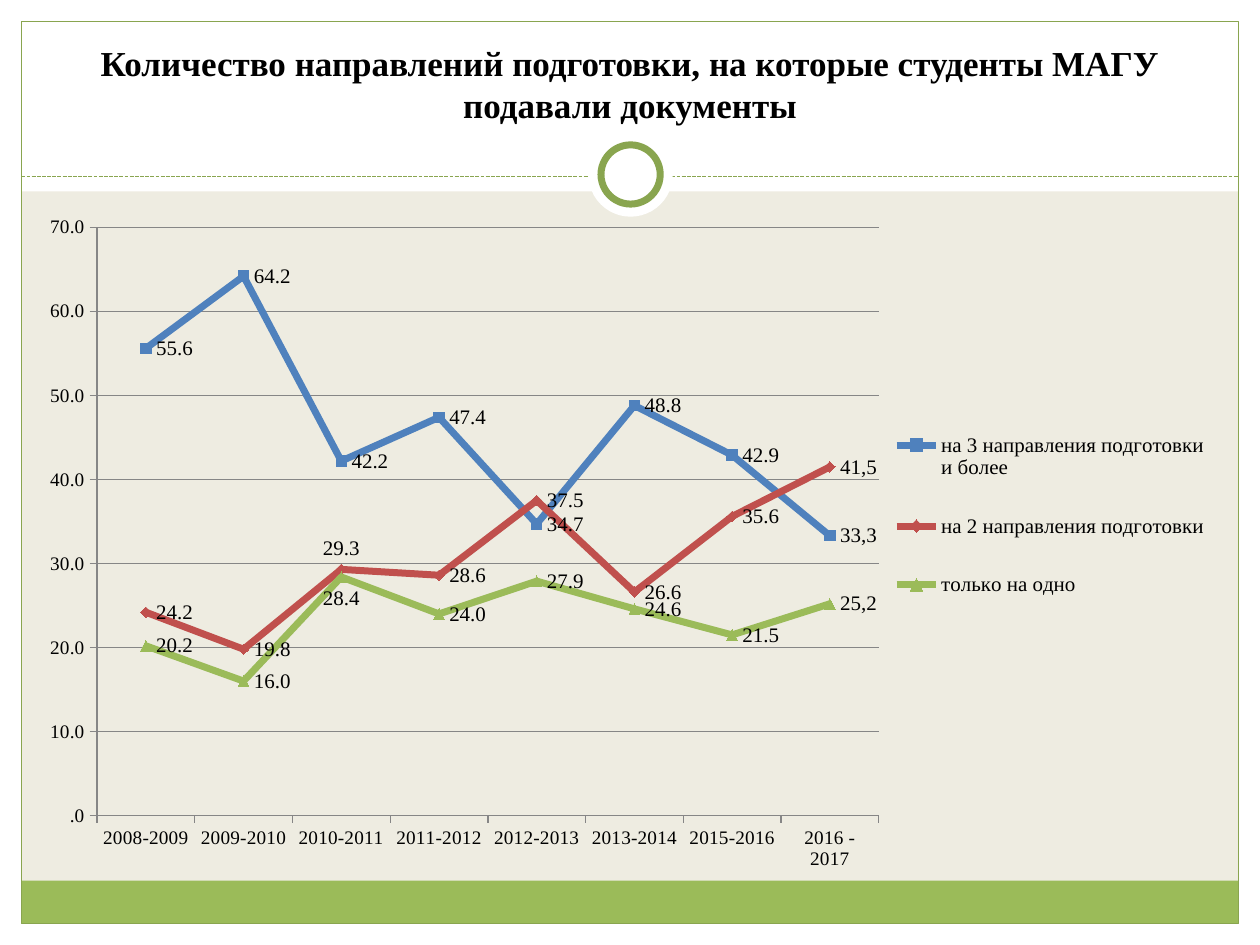
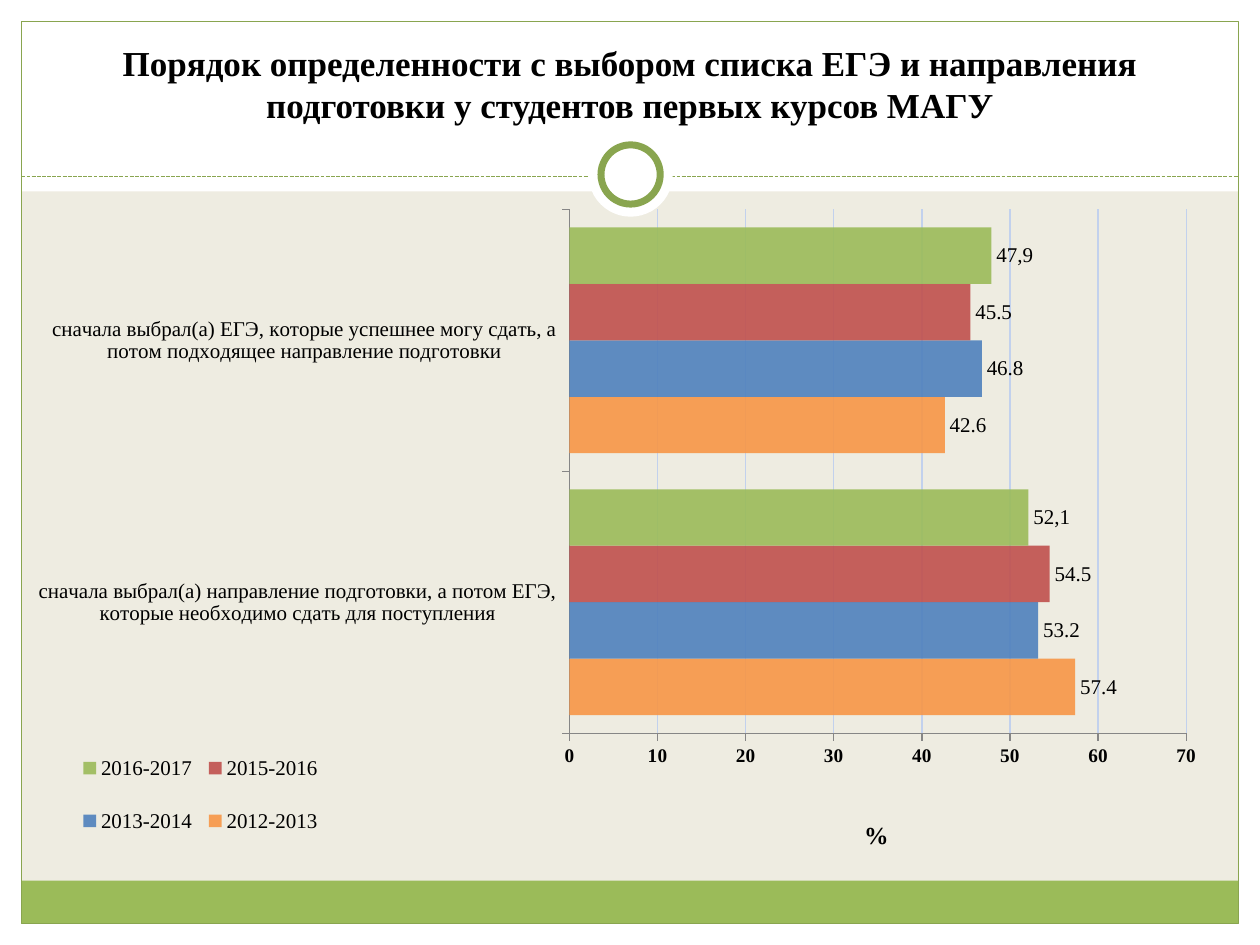
from typing import NamedTuple

from lxml import etree
from pptx import Presentation
from pptx.chart.data import CategoryChartData
from pptx.dml.color import RGBColor
from pptx.enum.chart import XL_CHART_TYPE, XL_LABEL_POSITION, XL_LEGEND_POSITION, XL_MARKER_STYLE, XL_TICK_MARK
from pptx.enum.dml import MSO_LINE
from pptx.enum.shapes import MSO_CONNECTOR, MSO_SHAPE
from pptx.enum.text import MSO_ANCHOR, PP_ALIGN
from pptx.oxml.ns import qn
from pptx.util import Inches, Pt

LINE_CHART = XL_CHART_TYPE.LINE_MARKERS
BAR_CHART = XL_CHART_TYPE.BAR_CLUSTERED
ABOVE = XL_LABEL_POSITION.ABOVE
BELOW = XL_LABEL_POSITION.BELOW
RIGHT = XL_LABEL_POSITION.RIGHT
OUTSIDE_END = XL_LABEL_POSITION.OUTSIDE_END
LEGEND_RIGHT = XL_LEGEND_POSITION.RIGHT
SQUARE = XL_MARKER_STYLE.SQUARE
DIAMOND = XL_MARKER_STYLE.DIAMOND
TRIANGLE = XL_MARKER_STYLE.TRIANGLE
TICK_OUTSIDE = XL_TICK_MARK.OUTSIDE
TICK_NONE = XL_TICK_MARK.NONE
DASH = MSO_LINE.SQUARE_DOT
STRAIGHT = MSO_CONNECTOR.STRAIGHT
RECTANGLE = MSO_SHAPE.RECTANGLE
OVAL = MSO_SHAPE.OVAL
BOTTOM = MSO_ANCHOR.BOTTOM
CENTER = PP_ALIGN.CENTER

FONT = "Times New Roman"
BLACK = RGBColor(0x00, 0x00, 0x00)
WHITE = RGBColor(0xFF, 0xFF, 0xFF)
BEIGE = RGBColor(0xEE, 0xEC, 0xE1)
GREEN = RGBColor(0x9B, 0xBB, 0x59)
DARK_GREEN = RGBColor(0x89, 0xA5, 0x4F)
BLUE = RGBColor(0x4F, 0x81, 0xBD)
RED = RGBColor(0xC0, 0x50, 0x4D)
ORANGE = RGBColor(0xF7, 0x96, 0x46)
AXIS_GRAY = RGBColor(0x86, 0x86, 0x86)
PALE_BLUE = RGBColor(0xC2, 0xD1, 0xED)

MARGIN = 0.17
HEADER_HEIGHT = 1.52
DIVIDER_TOP = 1.4
FOOTER_HEIGHT = 0.34


class Box(NamedTuple):
    left: float
    top: float
    width: float
    height: float

    def share(self, left, top, width, height):
        return Box(self.left + left * self.width, self.top + top * self.height,
                   width * self.width, height * self.height)

    def inset(self, margin):
        return Box(self.left + margin, self.top + margin,
                   self.width - 2 * margin, self.height - 2 * margin)

    def lengths(self):
        return [Inches(value) for value in self]


class Series(NamedTuple):
    name: str
    values: tuple
    color: RGBColor
    number_format: str
    marker: object = None
    moved_labels: dict = {}
    bold_labels: dict = {}


SLIDE = Box(0, 0, 10, 7.5)
TITLE_AREA = SLIDE.share(0.03, 0.03, 0.94, 0.11)

DIRECTION_YEARS = ("2008-2009", "2009-2010", "2010-2011", "2011-2012",
                   "2012-2013", "2013-2014", "2015-2016", "2016 - 2017")
DIRECTION_SERIES = (
    Series("на 3 направления подготовки и более",
           (55.6, 64.2, 42.2, 47.4, 34.7, 48.8, 42.9, 33.3),
           BLUE, "####.0", SQUARE, {}, {7: "33,3"}),
    Series("на 2 направления подготовки",
           (24.2, 19.8, 29.3, 28.6, 37.5, 26.6, 35.6, 41.5),
           RED, "####.0", DIAMOND, {2: ABOVE}, {7: "41,5"}),
    Series("только на одно",
           (20.2, 16, 28.4, 24, 27.9, 24.6, 21.5, 25.2),
           GREEN, "####.0", TRIANGLE, {2: BELOW}, {7: "25,2"}),
)
CHOICE_ORDERS = (
    "сначала выбрал(а) направление подготовки, а потом ЕГЭ, которые необходимо сдать для поступления",
    "сначала выбрал(а) ЕГЭ, которые успешнее могу сдать, а потом подходящее направление подготовки",
)
CHOICE_SERIES = (
    Series("2012-2013", (57.4, 42.6), ORANGE, "General"),
    Series("2013-2014", (53.2, 46.8), BLUE, "General"),
    Series("2015-2016", (54.5, 45.5), RED, "###0.0"),
    Series("2016-2017", (52.1, 47.9), GREEN, "###0.0", bold_labels={0: "52,1", 1: "47,9"}),
)


def add_filled_shape(slide, kind, box, fill=None, line=None, line_width=0.75):
    shape = slide.shapes.add_shape(kind, *box.lengths())
    shape.shadow.inherit = False
    if fill is None:
        shape.fill.background()
    else:
        shape.fill.solid()
        shape.fill.fore_color.rgb = fill
    if line is None:
        shape.line.fill.background()
    else:
        shape.line.color.rgb = line
        shape.line.width = Pt(line_width)


def add_frame(slide, box):
    inner = box.inset(MARGIN)
    bottom = inner.top + inner.height
    right = inner.left + inner.width
    for edge in (
        Box(box.left, bottom, box.width, MARGIN),
        Box(box.left, box.top, box.width, HEADER_HEIGHT),
        Box(box.left, box.top, MARGIN, box.height),
        Box(right, box.top, MARGIN, box.height),
    ):
        add_filled_shape(slide, RECTANGLE, edge, WHITE)
    footer = Box(inner.left, bottom - FOOTER_HEIGHT, inner.width, FOOTER_HEIGHT)
    add_filled_shape(slide, RECTANGLE, footer, GREEN)
    add_filled_shape(slide, RECTANGLE, inner, line=DARK_GREEN)

    divider_y = Inches(box.top + DIVIDER_TOP)
    divider = slide.shapes.add_connector(STRAIGHT, Inches(inner.left), divider_y, Inches(right), divider_y)
    divider.line.color.rgb = DARK_GREEN
    divider.line.width = Pt(0.75)
    divider.line.dash_style = DASH
    etree.SubElement(divider.element.find(qn("p:spPr")), qn("a:effectLst"))

    medallion = Box(box.left + box.width / 2 - 0.33, box.top + 1.05, 0.67, 0.67)
    add_filled_shape(slide, OVAL, medallion, WHITE)
    add_filled_shape(slide, OVAL, medallion.inset(0.1), WHITE, DARK_GREEN, 4)


def place_title(slide, box, text):
    title = slide.shapes.title
    title.left, title.top, title.width, title.height = box.lengths()
    frame = title.text_frame
    frame.text = text
    frame.word_wrap = True
    frame.vertical_anchor = BOTTOM
    paragraph = frame.paragraphs[0]
    paragraph.alignment = CENTER
    set_font(paragraph.font, 20, True)
    title.element.getparent().append(title.element)


def set_font(font, size, bold=False):
    font.name = FONT
    font.size = Pt(size)
    font.bold = bold
    font.color.rgb = BLACK


def set_layout(element, position, shares, inner=False):
    for existing in element.findall(qn("c:layout")):
        element.remove(existing)
    layout = etree.Element(qn("c:layout"))
    manual = etree.SubElement(layout, qn("c:manualLayout"))
    settings = [("layoutTarget", "inner")] if inner else []
    settings += [("xMode", "edge"), ("yMode", "edge")]
    settings += zip("xywh", shares)
    for name, value in settings:
        etree.SubElement(manual, qn(f"c:{name}")).set("val", str(value))
    element.insert(position, layout)


def format_labels(series, details, position):
    labels = series.data_labels
    labels.show_value = True
    labels.number_format = details.number_format
    labels.number_format_is_linked = False
    labels.position = position
    set_font(labels.font, 12)
    for index, moved_position in details.moved_labels.items():
        label = series.points[index].data_label
        set_font(label.font, 12)
        label.position = moved_position
    for index, text in details.bold_labels.items():
        label = series.points[index].data_label
        label.text_frame.text = text
        set_font(label.text_frame.paragraphs[0].font, 12, True)
        label.position = position


def format_axis(axis, size, bold=False):
    set_font(axis.tick_labels.font, size, bold)
    axis.major_tick_mark = TICK_OUTSIDE
    axis.minor_tick_mark = TICK_NONE
    axis.format.line.color.rgb = AXIS_GRAY
    axis.format.line.width = Pt(0.75)


def format_value_axis(axis, maximum, number_format, grid_color, bold=False):
    format_axis(axis, 11, bold)
    axis.minimum_scale = 0
    axis.maximum_scale = maximum
    axis.major_unit = 10
    axis.tick_labels.number_format = number_format
    axis.tick_labels.number_format_is_linked = False
    axis.has_major_gridlines = True
    axis.major_gridlines.format.line.color.rgb = grid_color
    axis.major_gridlines.format.line.width = Pt(0.75)


def add_base_chart(slide, box, kind, categories, all_series, plot_shares, legend_shares):
    data = CategoryChartData()
    data.categories = categories
    for details in all_series:
        data.add_series(details.name, details.values)
    chart = slide.shapes.add_chart(kind, *box.lengths(), data).chart
    chart.has_title = False
    set_font(chart.font, 11)
    chart.plots[0].vary_by_categories = False

    body = chart.element.find(qn("c:chart"))
    area = etree.Element(qn("c:spPr"))
    etree.SubElement(area, qn("a:noFill"))
    etree.SubElement(etree.SubElement(area, qn("a:ln")), qn("a:noFill"))
    body.addnext(area)

    chart.has_legend = True
    chart.legend.position = LEGEND_RIGHT
    chart.legend.include_in_layout = False
    set_font(chart.legend.font, 12)
    set_layout(body.find(qn("c:plotArea")), 0, plot_shares, inner=True)
    set_layout(body.find(qn("c:legend")), 1, legend_shares)
    return chart


def add_directions_chart(slide, box):
    chart = add_base_chart(slide, box, LINE_CHART, DIRECTION_YEARS, DIRECTION_SERIES,
                           (0.05, 0.03, 0.66, 0.9), (0.72, 0.29, 0.27, 0.36))
    format_axis(chart.category_axis, 11)
    format_value_axis(chart.value_axis, 70, "####.0", AXIS_GRAY)
    for series, details in zip(chart.plots[0].series, DIRECTION_SERIES):
        series.smooth = False
        series.format.line.color.rgb = details.color
        series.format.line.width = Pt(4)
        series.marker.style = details.marker
        series.marker.size = 6
        series.marker.format.fill.solid()
        series.marker.format.fill.fore_color.rgb = details.color
        series.marker.format.line.color.rgb = details.color
        format_labels(series, details, RIGHT)


def add_choice_chart(slide, box):
    chart = add_base_chart(slide, box, BAR_CHART, CHOICE_ORDERS, CHOICE_SERIES,
                           (0.45, 0.03, 0.51, 0.77), (0.04, 0.79, 0.21, 0.2))
    chart.plots[0].gap_width = 64
    chart.plots[0].overlap = 0
    format_axis(chart.category_axis, 12)
    axis = chart.value_axis
    format_value_axis(axis, 70, "#,##0", PALE_BLUE, True)
    axis.has_title = True
    axis.axis_title.text_frame.text = "%"
    set_font(axis.axis_title.text_frame.paragraphs[0].font, 14, True)
    set_layout(axis.axis_title.element, 1, (0.69, 0.92))
    for series, details in zip(chart.plots[0].series, CHOICE_SERIES):
        series.format.fill.solid()
        series.format.fill.fore_color.rgb = details.color
        format_labels(series, details, OUTSIDE_END)
    for color in chart.element.xpath(".//c:ser/c:spPr/a:solidFill/a:srgbClr"):
        etree.SubElement(color, qn("a:alpha")).set("val", "90000")


def add_chart_slide(presentation, title, add_chart, chart_box):
    slide = presentation.slides.add_slide(presentation.slide_layouts[5])
    slide.background.fill.solid()
    slide.background.fill.fore_color.rgb = BEIGE
    add_frame(slide, SLIDE)
    place_title(slide, TITLE_AREA, title)
    add_chart(slide, chart_box)


def main():
    presentation = Presentation()
    presentation.slide_width = Inches(SLIDE.width)
    presentation.slide_height = Inches(SLIDE.height)
    add_chart_slide(presentation,
                    "Количество направлений подготовки, на которые студенты МАГУ подавали документы",
                    add_directions_chart, SLIDE.share(0.03, 0.22, 0.94, 0.7))
    add_chart_slide(presentation,
                    "Порядок определенности с выбором списка ЕГЭ и направления подготовки у студентов первых курсов МАГУ",
                    add_choice_chart, SLIDE.share(0.02, 0.2, 0.96, 0.72))
    presentation.save("out.pptx")


if __name__ == "__main__":
    main()
